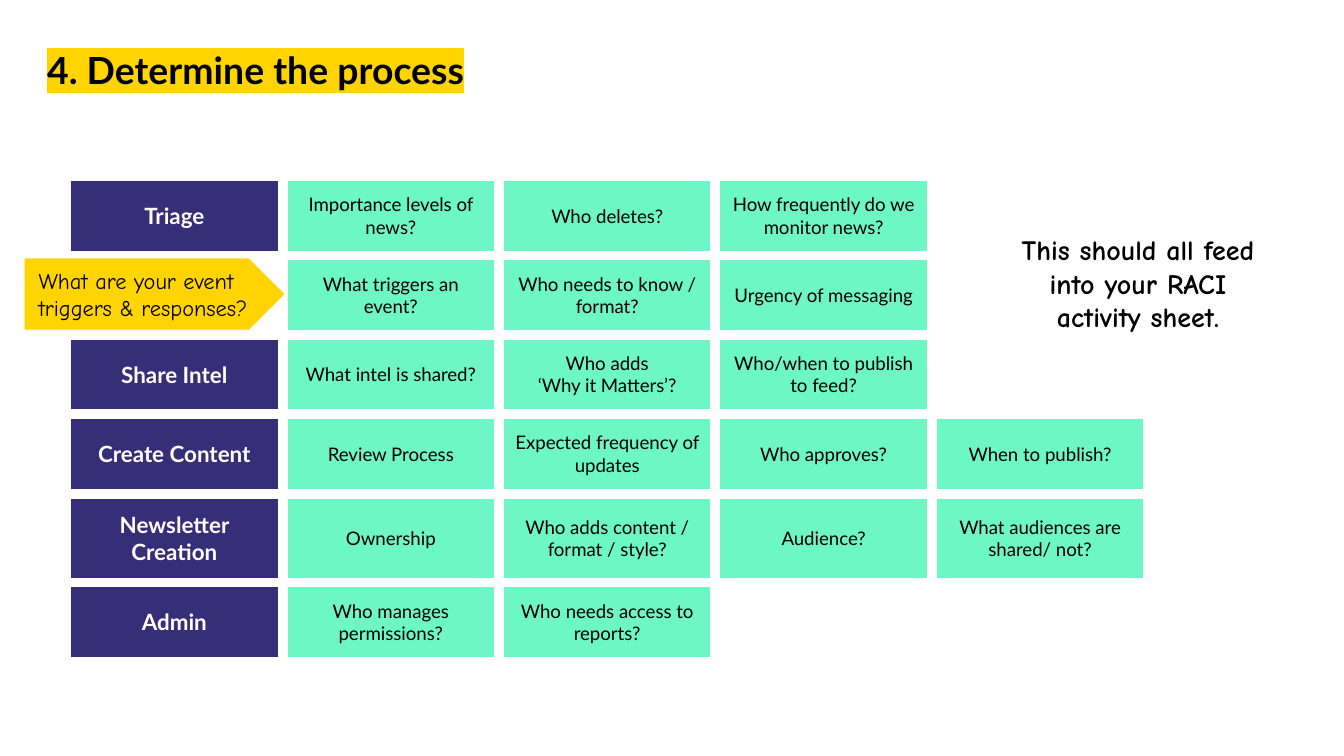
from lxml.etree import SubElement
from pptx import Presentation
from pptx.dml.color import RGBColor
from pptx.enum.shapes import MSO_SHAPE as Shape
from pptx.enum.text import MSO_ANCHOR as Anchor, PP_ALIGN as Align
from pptx.oxml import parse_xml
from pptx.oxml.ns import nsdecls, qn
from pptx.util import Cm, Pt

BLACK = RGBColor(0x00, 0x00, 0x00)
WHITE = RGBColor(0xFF, 0xFF, 0xFF)
YELLOW = RGBColor(0xFF, 0xD4, 0x00)
PURPLE = RGBColor(0x36, 0x2E, 0x77)
MINT = RGBColor(0x6C, 0xF7, 0xC5)

MARGIN = Cm(0.25)
COLUMN_WIDTH = Cm(4.09)
ROW_HEIGHT = Cm(1.5)
TALL_ROW_HEIGHT = Cm(1.68)
BORDER_WIDTH = Pt(6)

# Each row holds a process step followed by its questions.
PROCESS = [
    ["Triage", "Importance levels of news?", "Who deletes?",
     "How frequently do we monitor news?", ""],
    ["", "What triggers an event?", "Who needs to know / format?",
     "Urgency of messaging", ""],
    ["Share Intel", "What intel is shared?", "Who adds\n‘Why it Matters’?",
     "Who/when to publish to feed?", ""],
    ["Create Content", "Review Process", "Expected frequency of updates",
     "Who approves?", "When to publish?"],
    ["Newsletter Creation", "Ownership", "Who adds content / format / style?",
     "Audience?", "What audiences are shared/ not?"],
    ["Admin", "Who manages permissions?", "Who needs access to reports?", "", ""],
]
TALL_ROW = 4


def write_text(text_frame, text, size, font="Lato", color=BLACK, bold=False,
               align=Align.LEFT, highlight=None):
    """Write one paragraph per line of text."""
    for index, line in enumerate(text.split("\n")):
        paragraph = text_frame.paragraphs[0] if index == 0 else text_frame.add_paragraph()
        paragraph.alignment = align
        run = paragraph.add_run()
        run.text = line
        run.font.size = Pt(size)
        run.font.name = font
        run.font.bold = bold
        run.font.color.rgb = color
        if highlight is not None:
            run.font._element.find(qn("a:latin")).addprevious(parse_xml(
                f'<a:highlight {nsdecls("a")}><a:srgbClr val="{highlight}"/></a:highlight>'))


def set_margins(box, horizontal=MARGIN, vertical=MARGIN):
    box.margin_left = box.margin_right = horizontal
    box.margin_top = box.margin_bottom = vertical


def add_title(slide, text):
    title = slide.shapes.title
    title.left, title.top, title.width, title.height = Cm(0.71), Cm(0.79), Cm(16.18), Cm(1.6)
    frame = title.text_frame
    frame.word_wrap = True
    frame.vertical_anchor = Anchor.TOP
    set_margins(frame, Cm(0.18), Cm(0.1))
    write_text(frame, text, 20, bold=True, highlight=YELLOW)


def set_borders(cell, color, width):
    properties = cell._tc.get_or_add_tcPr()
    for index, side in enumerate(("lnL", "lnR", "lnT", "lnB")):
        line = SubElement(properties, qn(f"a:{side}"), w=str(width))
        fill = SubElement(line, qn("a:solidFill"))
        SubElement(fill, qn("a:srgbClr"), val=str(color))
        properties.insert(index, line)


def fill_cell(cell, text, is_step):
    set_borders(cell, WHITE, BORDER_WIDTH)
    set_margins(cell)
    cell.vertical_anchor = Anchor.MIDDLE
    if not text:
        cell.fill.background()
        return
    cell.fill.solid()
    cell.fill.fore_color.rgb = PURPLE if is_step else MINT
    write_text(cell.text_frame, text, 12 if is_step else 10, bold=is_step,
               color=WHITE if is_step else BLACK, align=Align.CENTER)


def add_process_table(slide, rows):
    column_count = len(rows[0])
    height = ROW_HEIGHT * (len(rows) - 1) + TALL_ROW_HEIGHT
    table = slide.shapes.add_table(len(rows), column_count, Cm(1.25), Cm(3.33),
                                   COLUMN_WIDTH * column_count, height).table
    table.first_row = table.horz_banding = False
    for column in table.columns:
        column.width = COLUMN_WIDTH
    for row_index, texts in enumerate(rows):
        table.rows[row_index].height = TALL_ROW_HEIGHT if row_index == TALL_ROW else ROW_HEIGHT
        for column_index, text in enumerate(texts):
            fill_cell(table.cell(row_index, column_index), text, column_index == 0)


def add_note(slide, kind, box, text, fill=None, **text_format):
    shape = slide.shapes.add_shape(kind, *(Cm(length) for length in box))
    shape.shadow.inherit = False
    if fill is None:
        shape.fill.background()
        shape.line.fill.background()
    else:
        shape.fill.solid()
        shape.fill.fore_color.rgb = fill
        shape.line.color.rgb = fill
        shape.line.width = Pt(0.75)
    frame = shape.text_frame
    frame.word_wrap = True
    frame.vertical_anchor = Anchor.MIDDLE
    set_margins(frame)
    write_text(frame, text, font="Comic Neue", **text_format)
    return shape


def main():
    presentation = Presentation()
    presentation.slide_width, presentation.slide_height = Cm(25.4), Cm(14.29)
    slide = presentation.slides.add_slide(presentation.slide_layouts[5])

    add_title(slide, "4. Determine the process")
    add_process_table(slide, PROCESS)
    add_note(slide, Shape.PENTAGON, (0.48, 4.9, 4.88, 1.32),
             "What are your event triggers & responses?", fill=YELLOW, size=12)
    callout = add_note(slide, Shape.OVAL_CALLOUT, (17.7, 4.17, 7.62, 2.36),
                       "This should all feed into your RACI activity sheet.",
                       size=15, bold=True, align=Align.CENTER)
    callout.adjustments[0], callout.adjustments[1] = -0.49, -0.03

    presentation.save("out.pptx")


if __name__ == "__main__":
    main()
